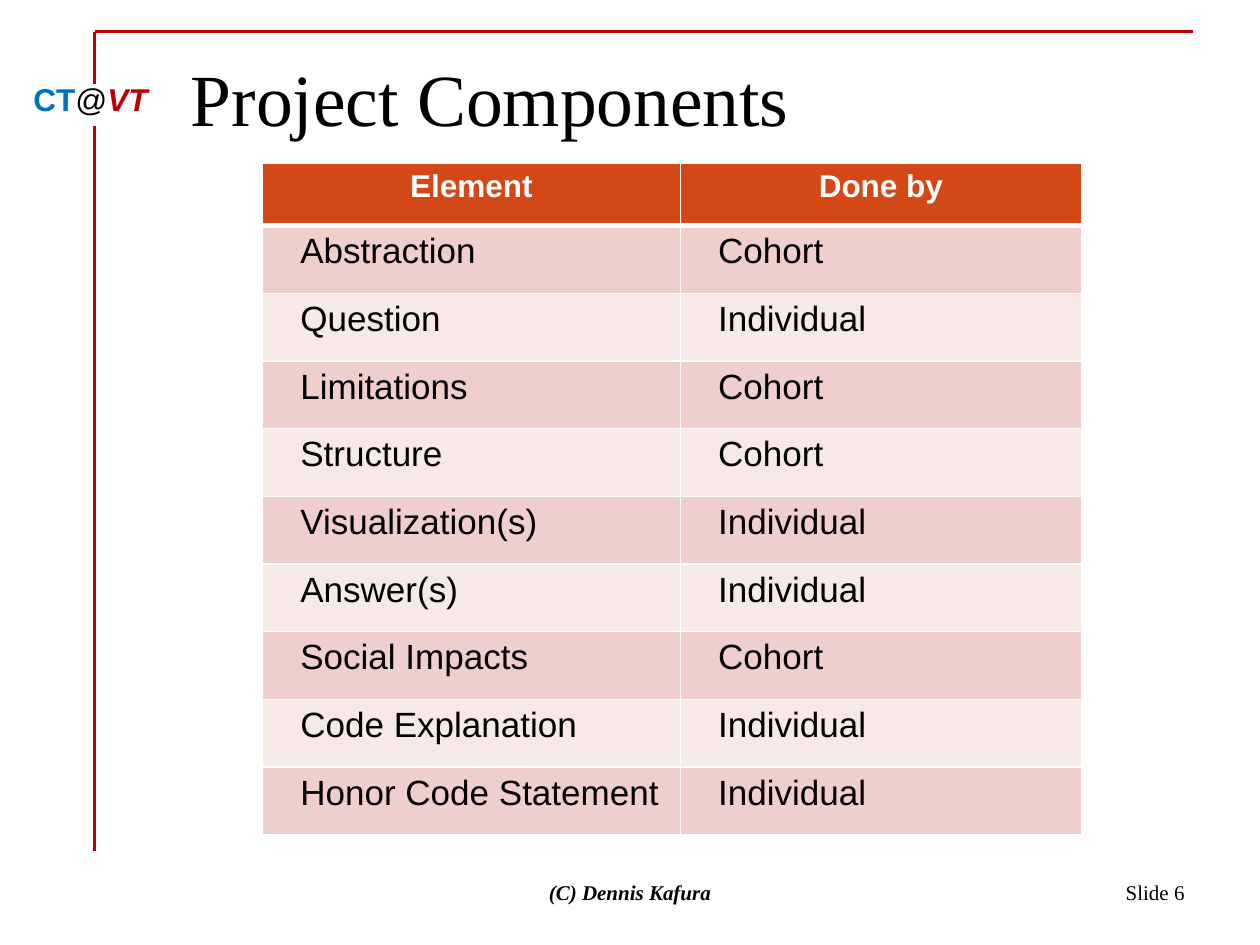
from lxml import etree
from pptx import Presentation
from pptx import util as u
from pptx.dml.color import RGBColor
from pptx.enum import shapes, text
from pptx.oxml.ns import qn

BLACK = RGBColor(0x00, 0x00, 0x00)
WHITE = RGBColor(0xFF, 0xFF, 0xFF)
RED = RGBColor(0xC0, 0x00, 0x00)
BLUE = RGBColor(0x00, 0x70, 0xC0)
ORANGE = RGBColor(0xD3, 0x48, 0x17)
ROSE = RGBColor(0xEF, 0xCF, 0xCC)
PALE_ROSE = RGBColor(0xF7, 0xE9, 0xE8)

SANS, SERIF = "Arial", "Times New Roman"
LEFT, CENTER, RIGHT = text.PP_ALIGN.LEFT, text.PP_ALIGN.CENTER, text.PP_ALIGN.RIGHT
TOP, MIDDLE = text.MSO_ANCHOR.TOP, text.MSO_ANCHOR.MIDDLE
GRID_COLS, GRID_ROWS = 120, 90
UNIT = u.Inches(10) / GRID_COLS

COMPONENTS = [
    ("Abstraction", "Cohort"),
    ("Question", "Individual"),
    ("Limitations", "Cohort"),
    ("Structure", "Cohort"),
    ("Visualization(s)", "Individual"),
    ("Answer(s)", "Individual"),
    ("Social Impacts", "Cohort"),
    ("Code Explanation", "Individual"),
    ("Honor Code Statement", "Individual"),
]


def grid(*units):
    return [u.Emu(round(n * UNIT)) for n in units]


def style(font, name, size, color, bold=False, italic=False):
    font.name, font.size = name, u.Pt(size)
    font.bold, font.italic = bold, italic
    font.color.rgb = color


def add_rule(s, ends, width):
    line = s.shapes.add_connector(shapes.MSO_CONNECTOR.STRAIGHT, *grid(*ends))
    line.line.color.rgb = RED
    line.line.width = u.Pt(width)
    etree.SubElement(line._element.spPr, qn("a:effectLst"))


def add_text(s, box, words, size, align=LEFT, anchor=TOP, **look):
    tf = s.shapes.add_textbox(*grid(*box)).text_frame
    tf.word_wrap = True
    tf.vertical_anchor = anchor
    p = tf.paragraphs[0]
    p.text, p.alignment = words, align
    style(p.font, SERIF, size, BLACK, **look)
    return tf


def add_badge(s, box):
    tf = s.shapes.add_textbox(*grid(*box)).text_frame
    tf.word_wrap = False
    tf.auto_size = text.MSO_AUTO_SIZE.SHAPE_TO_FIT_TEXT
    parts = [("CT", BLUE, True, False), ("@", BLACK, False, False), ("VT", RED, True, True)]
    for words, color, bold, italic in parts:
        r = tf.paragraphs[0].add_run()
        r.text = words
        style(r.font, SANS, 18, color, bold, italic)


def set_borders(cell, top, bottom):
    tcPr = cell._tc.get_or_add_tcPr()
    for i, (side, width) in enumerate([("L", 1), ("R", 1), ("T", top), ("B", bottom)]):
        ln = etree.Element(qn(f"a:ln{side}"), w=str(u.Pt(width)))
        fill = etree.SubElement(ln, qn("a:solidFill"))
        etree.SubElement(fill, qn("a:srgbClr"), val=str(WHITE))
        tcPr.insert(i, ln)


def fill_cell(cell, words, row):
    p = cell.text_frame.paragraphs[0]
    p.text = words
    cell.fill.solid()
    if row == 0:
        cell.fill.fore_color.rgb = ORANGE
        p.alignment = CENTER
        style(p.font, SANS, 18, WHITE, bold=True)
    else:
        cell.fill.fore_color.rgb = ROSE if row % 2 else PALE_ROSE
        p._p.get_or_add_pPr().set("marL", str(u.Inches(0.2)))
        style(p.font, SANS, 20, BLACK)
    set_borders(cell, top=3 if row == 1 else 1, bottom=3 if row == 0 else 1)


def add_components(s, box):
    rows = [("Element", "Done by")] + COMPONENTS
    table = s.shapes.add_table(len(rows), 2, *grid(*box)).table
    header = 6
    body = (box[3] - header) / len(COMPONENTS)
    for column, width in zip(table.columns, grid(39.8, 38.2)):
        column.width = width
    for i, row in enumerate(rows):
        table.rows[i].height = grid(body if i else header)[0]
        for j, words in enumerate(row):
            fill_cell(table.cell(i, j), words, i)


def main():
    prs = Presentation()
    prs.slide_width, prs.slide_height = grid(GRID_COLS, GRID_ROWS)
    s = prs.slides.add_slide(prs.slide_layouts[6])
    add_rule(s, (9, 3, 113.6, 3), 2)
    add_badge(s, (2, 7, 13.4, 4.8))
    add_rule(s, (9, 3, 9, 8), 1.75)
    add_rule(s, (9, 12, 9, 81), 1.75)
    title = add_text(s, (17, 3.6, 97, 9.4), "Project Components", 42)
    title.margin_top = u.Inches(0.12)
    add_text(s, (86, 82, 28, 6), "Slide 6", 12, RIGHT, MIDDLE)
    add_text(s, (41, 82, 38, 6), "(C) Dennis Kafura", 12, CENTER, MIDDLE, bold=True, italic=True)
    add_components(s, (25, 15.5, 78, 64))
    prs.save("out.pptx")


if __name__ == "__main__":
    main()
